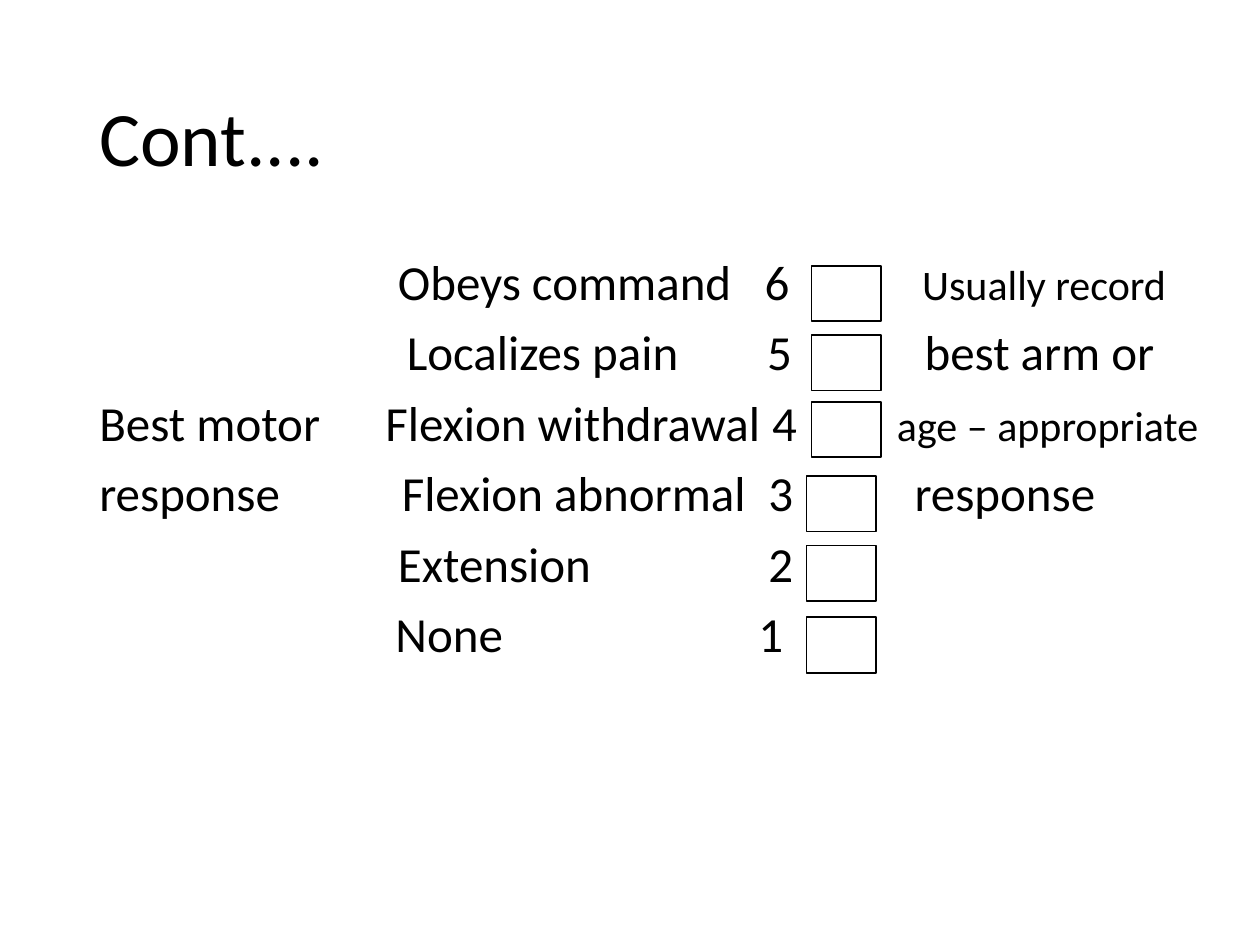
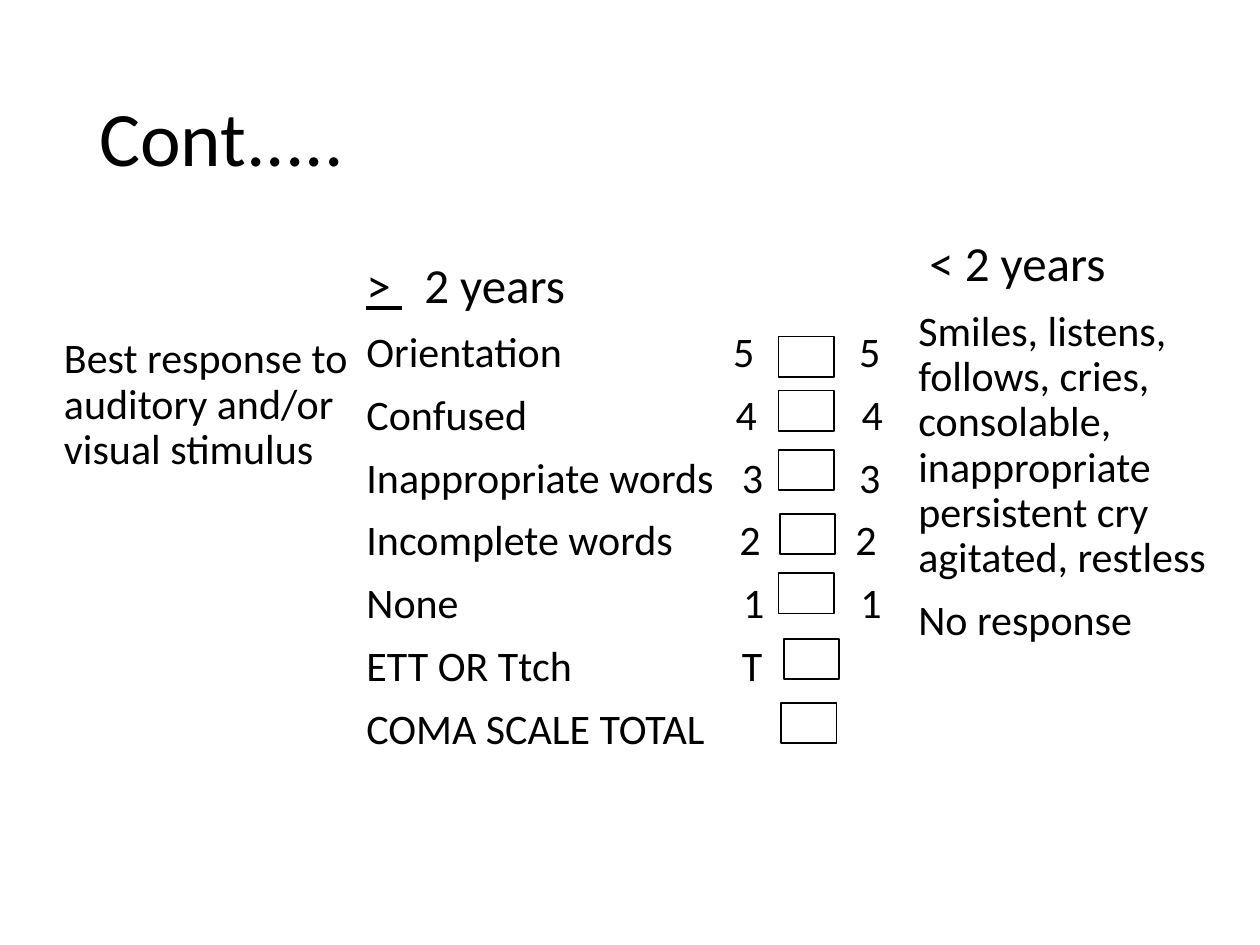
from lxml.etree import SubElement
from pptx import Presentation
from pptx.dml.color import RGBColor
from pptx.enum.shapes import MSO_SHAPE as Shape
from pptx.enum.text import MSO_ANCHOR as Anchor
from pptx.oxml.ns import qn
from pptx.util import Inches, Pt

COLORS = {"ink": "000000", "paper": "FFFFFF"}
FONT = "Calibri"
INSET = 0.1
BODY, SMALL, TITLE = 28, 24, 44

# Each row: its (text, size) runs, then where each tab lands on the slide.
MOTOR_ROWS = [
    ([("\tObeys command\t6\t", BODY), ("Usually record", SMALL)], (3.16, 6.07, 7.32)),
    ([("\tLocalizes pain\t5\tbest arm or", BODY)], (3.23, 6.09, 7.34)),
    ([("Best motor\tFlexion withdrawal\t4\t", BODY), ("age – appropriate", SMALL)],
     (3.06, 6.13, 7.12)),
    ([("response\tFlexion abnormal\t3\tresponse", BODY)], (3.19, 6.1, 7.26)),
    ([("\tExtension\t2", BODY)], (3.16, 6.1)),
    ([("\tNone\t1", BODY)], (3.14, 6.02)),
]
MOTOR_BOXES = [(6.44, 2.11), (6.44, 2.66), (6.44, 3.19),
               (6.4, 3.78), (6.4, 4.33), (6.4, 4.9)]

VERBAL_ROWS = [
    ([("> ", BODY, True), ("\t2 years", BODY)], (3.37,)),
    ([("Orientation\t5\t5", SMALL)], (5.82, 6.82)),
    ([("Confused\t4\t4", SMALL)], (5.84, 6.84)),
    ([("Inappropriate words\t3\t3", SMALL)], (5.89, 6.82)),
    ([("Incomplete words\t2\t2", SMALL)], (5.87, 6.79)),
    ([("None\t1\t1", SMALL)], (5.9, 6.83)),
    ([("ETT OR Ttch\tT", SMALL)], (5.89,)),
    ([("COMA SCALE TOTAL", SMALL)], ()),
]
VERBAL_BOXES = [(6.18, 2.67), (6.18, 3.1), (6.18, 3.57), (6.19, 4.08),
                (6.18, 4.55), (6.22, 5.07), (6.2, 5.58)]

STIMULUS_ROWS = [([("Best response to auditory and/or visual stimulus", SMALL)], ())]
INFANT_ROWS = [
    ([(" < 2 years", BODY)], ()),
    ([("Smiles, listens, follows, cries, consolable, inappropriate "
       "persistent cry agitated, restless", SMALL)], ()),
    ([("No response", SMALL)], ()),
]


def color(name):
    return RGBColor.from_string(COLORS[name])


def apply_format(target, values):
    for name, value in values.items():
        setattr(target, name, value)


def set_tab_stops(paragraph, offsets):
    """Place left tab stops, in inches from the text's left edge."""
    tab_list = SubElement(paragraph._p.get_or_add_pPr(), qn("a:tabLst"))
    for offset in offsets:
        SubElement(tab_list, qn("a:tab"), pos=str(Inches(offset)), algn="l")


def add_run(paragraph, text, size, underline=False):
    run = paragraph.add_run()
    run.text = text
    apply_format(run.font, {"name": FONT, "size": Pt(size), "underline": underline})
    run.font.color.rgb = color("ink")


def add_rows(slide, area, rows, anchor=Anchor.TOP, space_before=10):
    frame = slide.shapes.add_textbox(*map(Inches, area)).text_frame
    apply_format(frame, {"word_wrap": True, "vertical_anchor": anchor})
    text_left = area[0] + INSET
    for index, (runs, stops) in enumerate(rows):
        paragraph = frame.add_paragraph() if index else frame.paragraphs[0]
        apply_format(paragraph, {"line_spacing": 0.9, "space_before": Pt(space_before)})
        if stops:
            set_tab_stops(paragraph, [stop - text_left for stop in stops])
        for run in runs:
            add_run(paragraph, *run)


def add_score_boxes(slide, corners, width, height):
    for left, top in corners:
        box = slide.shapes.add_shape(
            Shape.RECTANGLE, *map(Inches, (left, top, width, height)))
        box.shadow.inherit = False
        box.fill.solid()
        box.fill.fore_color.rgb = color("paper")
        box.line.color.rgb = color("ink")
        box.line.width = Pt(1)


def add_titled_slide(deck, title):
    slide = deck.slides.add_slide(deck.slide_layouts[6])
    add_rows(slide, (0.69, 0.4, 8.62, 1.45), [([(title, TITLE)], ())],
             anchor=Anchor.MIDDLE, space_before=0)
    return slide


def main():
    deck = Presentation()
    apply_format(deck, {"slide_width": Inches(10), "slide_height": Inches(7.5)})

    motor = add_titled_slide(deck, "Cont....")
    add_rows(motor, (0.69, 2, 9.05, 4.76), MOTOR_ROWS)
    add_score_boxes(motor, MOTOR_BOXES, 0.55, 0.44)

    verbal = add_titled_slide(deck, "Cont.....")
    add_rows(verbal, (0.41, 2.63, 2.47, 3.17), STIMULUS_ROWS)
    add_rows(verbal, (2.81, 2.02, 4.39, 4.76), VERBAL_ROWS)
    add_rows(verbal, (7.19, 1.85, 2.65, 4.12), INFANT_ROWS)
    add_score_boxes(verbal, VERBAL_BOXES, 0.44, 0.32)

    deck.save("out.pptx")


if __name__ == "__main__":
    main()
